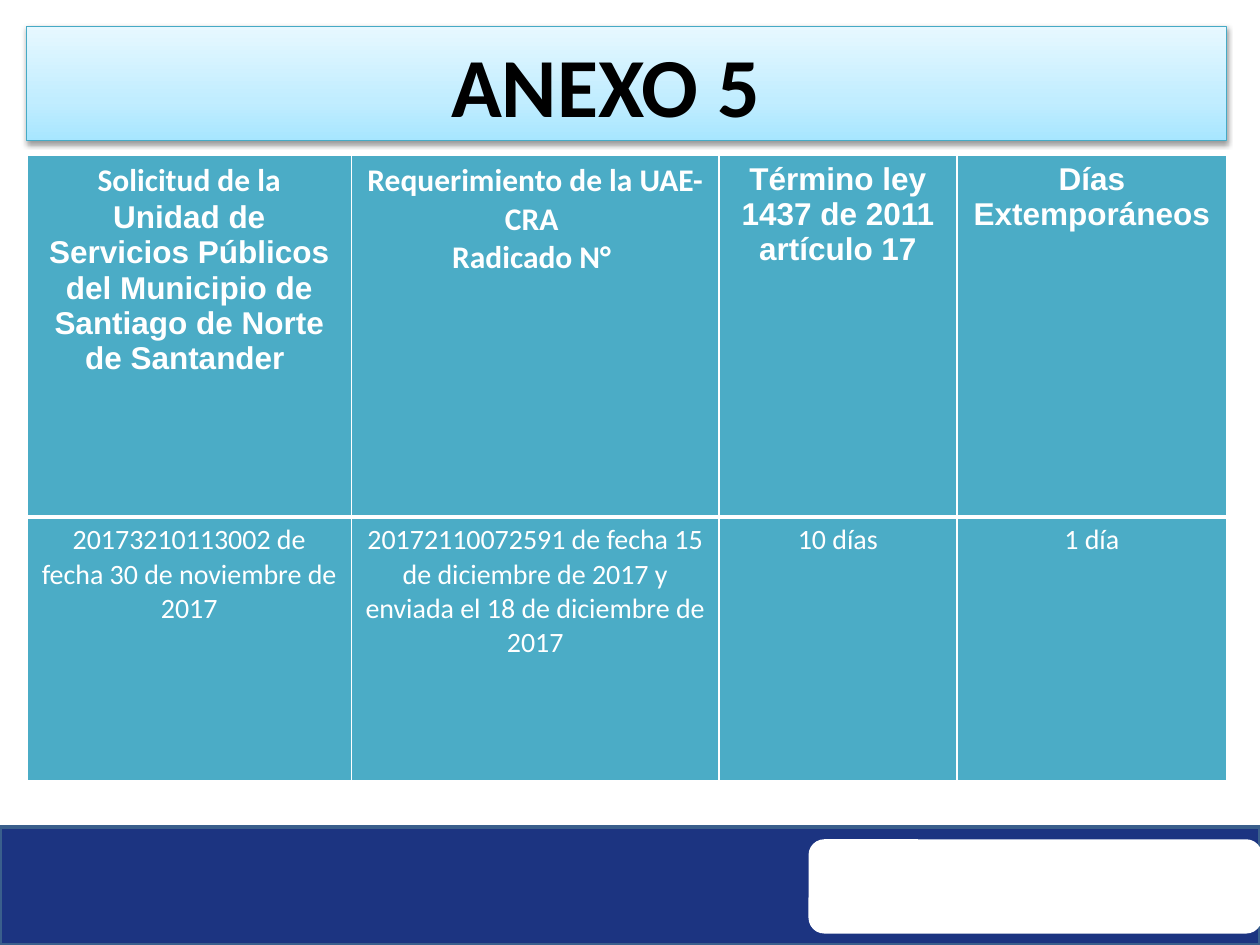
from dataclasses import dataclass

from lxml import etree
from pptx import Presentation
from pptx import util as u
from pptx.dml.color import RGBColor
from pptx.enum import shapes, text
from pptx.oxml import parse_xml
from pptx.oxml.ns import nsdecls, qn


@dataclass(frozen=True)
class Theme:
    white: str = "FFFFFF"
    black: str = "000000"
    navy: str = "1C3481"
    navy_line: str = "3A5F8C"
    teal: str = "4BACC6"
    teal_line: str = "46AAC5"
    title_stops: tuple = ((0, "A7E6FF"), (35, "C1EDFF"), (100, "E7F8FF"))
    title_size: int = 48
    head_size: int = 18
    body_size: int = 16
    font: str = "Calibri"
    alt_font: str = "Arial"


class Deck:
    def __init__(self, theme):
        self.theme = theme
        self.prs = Presentation()
        self.prs.slide_width, self.prs.slide_height = u.Cm(25.4), u.Cm(19.05)
        self.s = self.prs.slides.add_slide(self.prs.slide_layouts[5])

    def style(self, p, size, font, color, bold):
        p.alignment = text.PP_ALIGN.CENTER
        p.font.size, p.font.name, p.font.bold = u.Pt(size), font, bold
        p.font.color.rgb = RGBColor.from_string(color)

    def box(self, kind, x, y, w, h, fill, line=None):
        sp = self.s.shapes.add_shape(kind, u.Cm(x), u.Cm(y), u.Cm(w), u.Cm(h))
        sp.shadow.inherit = False
        sp.fill.solid()
        sp.fill.fore_color.rgb = RGBColor.from_string(fill)
        if line:
            sp.line.color.rgb = RGBColor.from_string(line)
            sp.line.width = u.Pt(2)
        else:
            sp.line.fill.background()

    def title(self, words, x, y, w, h):
        t = self.theme
        sp = self.s.shapes.title
        sp.left, sp.top, sp.width, sp.height = map(u.Cm, (x, y, w, h))
        # Vertical gradient, pale at the top
        sp.fill.gradient()
        sp.fill.gradient_angle = 90
        stops = sp.element.spPr.find(".//" + qn("a:gsLst"))
        for gs in list(stops):
            stops.remove(gs)
        for pos, color in t.title_stops:
            gs = etree.SubElement(stops, qn("a:gs"), pos=str(pos * 1000))
            etree.SubElement(gs, qn("a:srgbClr"), val=color)
        sp.line.color.rgb = RGBColor.from_string(t.teal_line)
        sp.line.width = u.Pt(0.75)
        # Soft shadow below
        sp.element.spPr.append(parse_xml(
            f'<a:effectLst {nsdecls("a")}><a:outerShdw blurRad="{u.Pt(3.1)}" '
            f'dist="{u.Pt(1.6)}" dir="5400000" rotWithShape="0">'
            f'<a:srgbClr val="{t.black}"><a:alpha val="38000"/></a:srgbClr>'
            '</a:outerShdw></a:effectLst>'))
        tf = sp.text_frame
        tf.word_wrap = True
        tf.auto_size = text.MSO_AUTO_SIZE.NONE
        tf.vertical_anchor = text.MSO_ANCHOR.MIDDLE
        tf.margin_right = u.Cm(1.1)
        tf.text = words
        self.style(tf.paragraphs[0], t.title_size, t.font, t.black, True)

    def borders(self, cell, bottom):
        tc_pr = cell._tc.get_or_add_tcPr()
        widths = {"lnL": 1, "lnR": 1, "lnT": 1, "lnB": bottom}
        for i, (tag, width) in enumerate(widths.items()):
            tc_pr.insert(i, parse_xml(
                f'<a:{tag} {nsdecls("a")} w="{u.Pt(width)}"><a:solidFill>'
                f'<a:srgbClr val="{self.theme.white}"/></a:solidFill></a:{tag}>'))

    def table(self, rows, x, y, widths, heights):
        t = self.theme
        frame = self.s.shapes.add_table(
            len(rows), len(widths), u.Cm(x), u.Cm(y),
            u.Cm(sum(widths)), u.Cm(sum(heights)))
        tbl = frame.table
        for col, width in zip(tbl.columns, widths):
            col.width = u.Cm(width)
        for i, (row, height) in enumerate(zip(rows, heights)):
            head = i == 0
            tbl.rows[i].height = u.Cm(height)
            for j, paragraphs in enumerate(row):
                cell = tbl.cell(i, j)
                cell.fill.solid()
                cell.fill.fore_color.rgb = RGBColor.from_string(t.teal)
                # A thick rule closes the header and meets the first row
                self.borders(cell, 3 if head else 1)
                tf = cell.text_frame
                tf.text = "\n".join(words for words, font in paragraphs)
                size = t.head_size if head else t.body_size
                for p, (words, font) in zip(tf.paragraphs, paragraphs):
                    self.style(p, size, font, t.white, head)


def main():
    theme = Theme()
    deck = Deck(theme)
    main_font, alt = theme.font, theme.alt_font

    # Footer band with its white panel
    deck.box(shapes.MSO_SHAPE.RECTANGLE, 0, 16.67, 25.4, 2.38,
             theme.navy, theme.navy_line)
    deck.box(shapes.MSO_SHAPE.ROUNDED_RECTANGLE, 16.3, 16.92, 9.14, 1.9, theme.white)

    # Title
    deck.title("ANEXO 5", 0.53, 0.53, 24.2, 2.31)

    # Request and deadline table
    header = [
        [("Solicitud de la", main_font),
         ("Unidad de Servicios Públicos del Municipio de Santiago de Norte "
          "de Santander ", alt)],
        [("Requerimiento de la UAE-CRA ", main_font), ("Radicado N° ", main_font)],
        [("Término ley 1437 de 2011 artículo 17", alt)],
        [("Días Extemporáneos", alt)],
    ]
    values = [
        "20173210113002 de fecha 30 de noviembre de 2017",
        "20172110072591 de fecha 15 de diciembre de 2017 y enviada el 18 de "
        "diciembre de 2017",
        "10 días",
        "1 día",
    ]
    deck.table([header, [[(v, main_font)] for v in values]], 0.54, 3.13,
               widths=(6.55, 7.4, 4.8, 5.44), heights=(7.29, 5.31))

    deck.prs.save("out.pptx")


if __name__ == "__main__":
    main()
